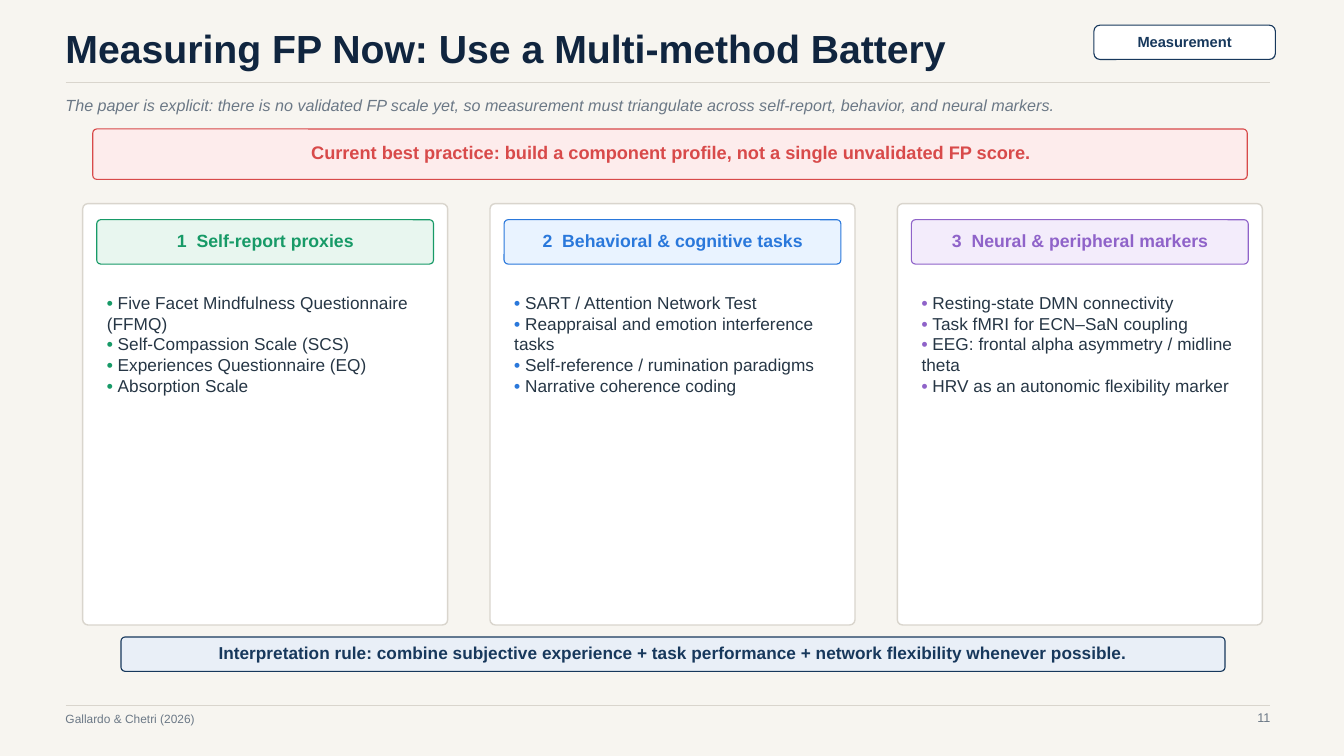
from lxml.etree import SubElement
from pptx import Presentation
from pptx.dml.color import RGBColor
from pptx.enum.shapes import MSO_CONNECTOR, MSO_SHAPE
from pptx.enum.text import MSO_ANCHOR, PP_ALIGN
from pptx.oxml.ns import qn
from pptx.util import Inches, Pt

COLORS = {
    "background": "F7F5F0", "white": "FFFFFF", "rule": "D9D5CD",
    "title": "10253F", "navy": "17385C", "navy_tint": "E9EFF7",
    "body": "263645", "muted": "6B7886",
    "red": "D84A4A", "red_tint": "FDECEC",
    "green": "179A67", "green_tint": "E8F6EF",
    "blue": "2A78DB", "blue_tint": "E9F3FF",
    "purple": "8F63C9", "purple_tint": "F3ECFB",
}

METHODS = [
    ("1  Self-report proxies", "green", [
        "Five Facet Mindfulness Questionnaire (FFMQ)",
        "Self-Compassion Scale (SCS)",
        "Experiences Questionnaire (EQ)",
        "Absorption Scale",
    ]),
    ("2  Behavioral & cognitive tasks", "blue", [
        "SART / Attention Network Test",
        "Reappraisal and emotion interference tasks",
        "Self-reference / rumination paradigms",
        "Narrative coherence coding",
    ]),
    ("3  Neural & peripheral markers", "purple", [
        "Resting-state DMN connectivity",
        "Task fMRI for ECN–SaN coupling",
        "EEG: frontal alpha asymmetry / midline theta",
        "HRV as an autonomic flexibility marker",
    ]),
]
PANEL_LEFT, PANEL_STEP = 0.82, 4.04


def color(name):
    return RGBColor.from_string(COLORS[name])


class SlideBuilder:
    font_name = "Arial"

    def __init__(self, slide):
        self.slide = slide
        slide.background.fill.solid()
        slide.background.fill.fore_color.rgb = color("background")

    def style_font(self, font, size, ink, bold=False, italic=False):
        font.name = self.font_name
        font.size = Pt(size)
        font.color.rgb = color(ink)
        font.bold = bold
        font.italic = italic

    def frame(self, left, top, width, height, anchor):
        box = self.slide.shapes.add_textbox(
            Inches(left), Inches(top), Inches(width), Inches(height))
        text_frame = box.text_frame
        text_frame.word_wrap = True
        text_frame.vertical_anchor = anchor
        text_frame.margin_left = text_frame.margin_right = 0
        text_frame.margin_top = text_frame.margin_bottom = 0
        return text_frame

    def text(self, left, top, width, height, text, size, ink,
             align=PP_ALIGN.LEFT, bold=False, italic=False):
        text_frame = self.frame(left, top, width, height, MSO_ANCHOR.MIDDLE)
        text_frame.text = text
        paragraph = text_frame.paragraphs[0]
        paragraph.alignment = align
        self.style_font(paragraph.runs[0].font, size, ink, bold, italic)

    def label(self, left, top, width, height, text, size, ink):
        self.text(left, top, width, height, text, size, ink, PP_ALIGN.CENTER, bold=True)

    def bullets(self, left, top, width, height, items, size, accent):
        text_frame = self.frame(left, top, width, height, MSO_ANCHOR.TOP)
        for index, item in enumerate(items):
            paragraph = text_frame.add_paragraph() if index else text_frame.paragraphs[0]
            for text, ink, bold in (("• ", accent, True), (item, "body", False)):
                run = paragraph.add_run()
                run.text = text
                self.style_font(run.font, size, ink, bold)

    def card(self, left, top, width, height, fill, line, radius=0.04, weight=0.8):
        shape = self.slide.shapes.add_shape(
            MSO_SHAPE.ROUNDED_RECTANGLE,
            Inches(left), Inches(top), Inches(width), Inches(height))
        shape.adjustments[0] = radius / height
        shape.shadow.inherit = False
        shape.fill.solid()
        shape.fill.fore_color.rgb = color(fill)
        shape.line.color.rgb = color(line)
        shape.line.width = Pt(weight)

    def rule(self, top, weight):
        connector = self.slide.shapes.add_connector(
            MSO_CONNECTOR.STRAIGHT,
            Inches(0.65), Inches(top), Inches(12.6), Inches(top))
        connector.line.color.rgb = color("rule")
        connector.line.width = Pt(weight)
        SubElement(connector._element.spPr, qn("a:effectLst"))

    def method_panel(self, left, heading, accent, items):
        self.card(left, 2.02, 3.62, 4.18, "white", "rule", radius=0.06, weight=1)
        self.card(left + 0.14, 2.18, 3.34, 0.44, f"{accent}_tint", accent)
        self.label(left + 0.22, 2.31, 3.18, 0.16, heading, 12.6, accent)
        self.bullets(left + 0.24, 2.9, 3.22, 2.4, items, 12.3, accent)


def main():
    presentation = Presentation()
    presentation.slide_width = Inches(13.33)
    presentation.slide_height = Inches(7.5)
    builder = SlideBuilder(presentation.slides.add_slide(presentation.slide_layouts[6]))

    builder.text(0.65, 0.28, 9.6, 0.38, "Measuring FP Now: Use a Multi-method Battery",
                 28, "title", bold=True)
    builder.rule(0.82, 1.1)
    builder.card(10.85, 0.25, 1.8, 0.34, "white", "navy", radius=0.06)
    builder.label(10.92, 0.31, 1.66, 0.2, "Measurement", 10.5, "navy")
    builder.text(0.65, 0.94, 12, 0.2,
                 "The paper is explicit: there is no validated FP scale yet, so measurement "
                 "must triangulate across self-report, behavior, and neural markers.",
                 11.5, "muted", italic=True)

    builder.card(0.92, 1.28, 11.45, 0.5, "red_tint", "red")
    builder.label(1.15, 1.41, 11, 0.2,
                  "Current best practice: build a component profile, "
                  "not a single unvalidated FP score.", 13, "red")

    for index, (heading, accent, items) in enumerate(METHODS):
        builder.method_panel(PANEL_LEFT + index * PANEL_STEP, heading, accent, items)

    builder.card(1.2, 6.32, 10.95, 0.34, "navy_tint", "navy")
    builder.label(1.35, 6.4, 10.65, 0.14,
                  "Interpretation rule: combine subjective experience + task performance "
                  "+ network flexibility whenever possible.", 12.3, "navy")

    builder.rule(7, 0.8)
    builder.text(0.65, 7.05, 3.6, 0.16, "Gallardo & Chetri (2026)", 8.5, "muted")
    builder.text(12.15, 7.03, 0.45, 0.18, "11", 9, "muted", PP_ALIGN.RIGHT)

    presentation.save("out.pptx")


if __name__ == "__main__":
    main()
